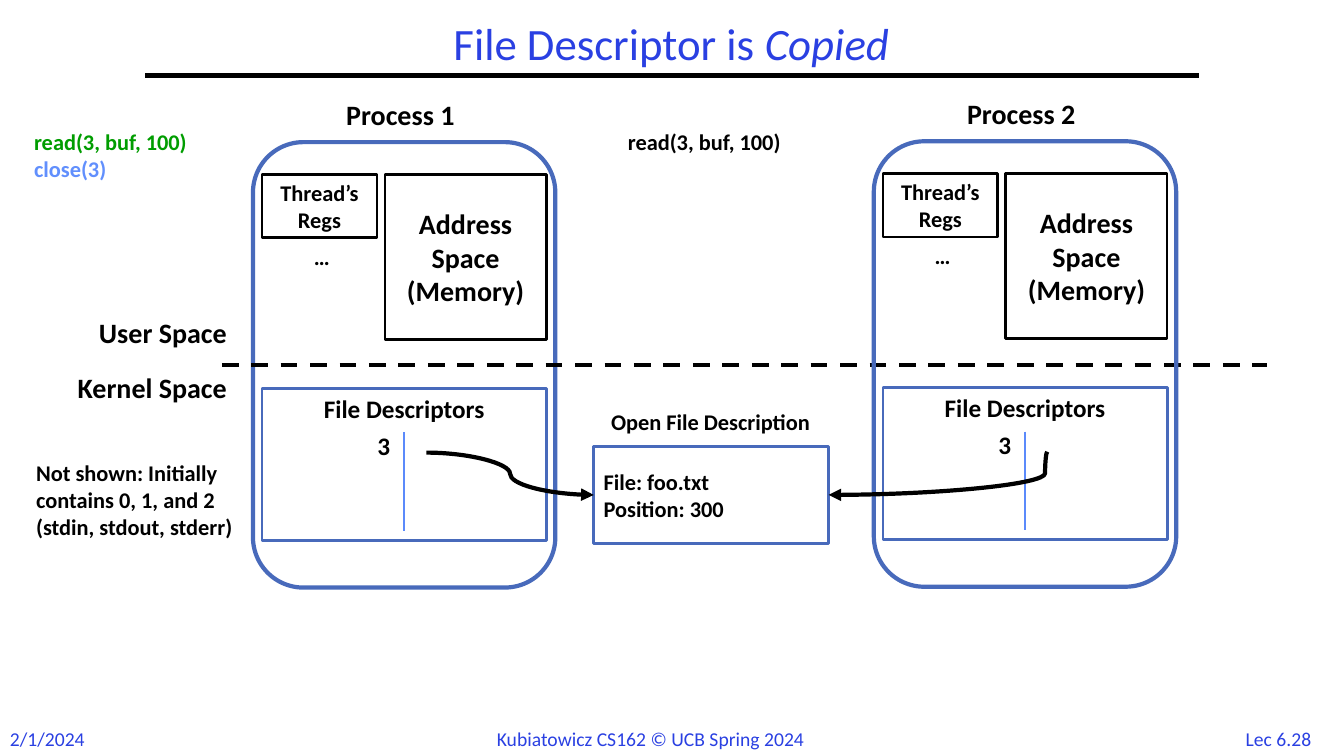
"""Builds the slide showing how a copied file descriptor shares one open file description."""
from lxml import etree
from pptx import Presentation
from pptx import util as u
from pptx.dml import color as c
from pptx.enum import dml, shapes, text
from pptx.oxml import ns

THEME = {
    "font": "Calibri",
    "title": "2A40E2", "ink": "000000", "paper": "FFFFFF", "frame": "486ABB",
    "divider": "5B8AFB", "read": "009D00", "close": "618FFD",
    "title_size": 32, "label_size": 20, "table_size": 18, "code_size": 16, "footer_size": 14,
    "thick": 3, "medium": 2, "thin": 1.5,
}
SLIDE = (960, 540)
TITLE = [("File Descriptor is ", False), ("Copied", True)]
FOOTERS = [
    ("2/1/2024", (0, 515.5, 69, 24.5), "left"),
    ("Kubiatowicz CS162 © UCB Spring 2024", (347.8, 515.5, 265, 24.5), "left"),
    ("Lec 6.28", (878.4, 515.5, 69.8, 24), "center"),
]
SPACES = [("User Space", (44.6, 221.8, 124.6, 31.7)), ("Kernel Space", (26.6, 261.4, 142.6, 31.7))]
CODE = [
    ([("read(3, buf, 100)", "read"), ("close(3)", "close")], (17.3, 87.8, 139, 46)),
    ([("read(3, buf, 100)", "ink")], (441.4, 87.8, 139, 26.6)),
]
NOTE = "Not shown: Initially contains 0, 1, and 2 (stdin, stdout, stderr)"
FILE_TITLE = "Open File Description"
FILE_STATE = ["File: foo.txt", "Position: 300"]
FILE_BOX = (424.1, 319, 167.8, 69.1)
PROCESSES = [("Process 1", 180.7, 101.5), ("Process 2", 624.2, 100.9)]
PROCESS_SIZE = (216, 318.2)
PROCESS_BOXES = [
    ("Address Space (Memory)", (94.3, 23, 115.2, 118.1), "ink", "label_size", "middle"),
    ("Thread’s Regs", (6.5, 23, 82.1, 45.4), "ink", "code_size", "middle"),
    ("File Descriptors", (6.5, 175.9, 203, 108.7), "frame", "table_size", "top"),
]
PROCESS_LABELS = [("3", (80.6, 202.3, 24.5, 28.8), "table_size", "right"),
                  ("…", (36.4, 68.6, 31, 26.6), "code_size", "left")]
PROCESS_TITLE = (50.2, -35.3, 110.2, 31.7)
DIVIDER = (108, 207.4, 108, 278)
DESCRIPTOR_Y = 221.8
ARROW_STARTS = [304.6, 748.1]

ALIGN = {"left": text.PP_ALIGN.LEFT, "center": text.PP_ALIGN.CENTER, "right": text.PP_ALIGN.RIGHT}
ANCHOR = {"top": text.MSO_ANCHOR.TOP, "middle": text.MSO_ANCHOR.MIDDLE}

prs = Presentation()
prs.slide_width, prs.slide_height = map(u.Pt, SLIDE)
s = prs.slides.add_slide(prs.slide_layouts[6])


def rgb(name):
    return c.RGBColor.from_string(THEME[name])


def write(sp, lines, size, align="left", anchor="top", wrap=True, bold=True):
    """Fills a shape with paragraphs, each a list of (words, colour, italic) runs."""
    tf = sp.text_frame
    tf.word_wrap = wrap
    tf.vertical_anchor = ANCHOR[anchor]
    for i, runs in enumerate(lines):
        p = tf.add_paragraph() if i else tf.paragraphs[0]
        p.alignment = ALIGN[align]
        for words, colour, italic in runs:
            r = p.add_run()
            r.text = words
            r.font.name, r.font.size = THEME["font"], u.Pt(THEME[size])
            r.font.bold, r.font.italic = bold, italic
            r.font.color.rgb = rgb(colour)
    return tf


def plain(*lines, colour="ink"):
    return [[(line, colour, False)] for line in lines]


def label(box, lines, size, **style):
    sp = s.shapes.add_textbox(*map(u.Pt, box))
    return write(sp, lines, size, **style)


def frame(box, colour, width, kind=shapes.MSO_SHAPE.RECTANGLE, filled=True):
    sp = s.shapes.add_shape(kind, *map(u.Pt, box))
    sp.shadow.inherit = False
    if filled:
        sp.fill.solid()
        sp.fill.fore_color.rgb = rgb("paper")
    else:
        sp.fill.background()
    sp.line.color.rgb = rgb(colour)
    sp.line.width = u.Pt(THEME[width])
    return sp


def line(ends, colour, width, kind=shapes.MSO_CONNECTOR.STRAIGHT):
    cx = s.shapes.add_connector(kind, *map(u.Pt, ends))
    cx.line.color.rgb = rgb(colour)
    cx.line.width = u.Pt(THEME[width])
    etree.SubElement(cx._element.spPr, ns.qn("a:effectLst"))
    return cx


def arrow(ends, bend):
    cx = line(ends, "ink", "thick", shapes.MSO_CONNECTOR.CURVE)
    etree.SubElement(cx.line._get_or_add_ln(), ns.qn("a:tailEnd"), type="triangle")
    guides = cx._element.spPr.find(ns.qn("a:prstGeom")).get_or_add_avLst()
    etree.SubElement(guides, ns.qn("a:gd"), name="adj1", fmla=f"val {bend}")


def process(name, x, y):
    def place(box):
        return (x + box[0], y + box[1], *box[2:])

    frame((x, y, *PROCESS_SIZE), "frame", "thick", shapes.MSO_SHAPE.ROUNDED_RECTANGLE, False)
    for words, box, colour, size, anchor in PROCESS_BOXES:
        sp = frame(place(box), colour, "medium")
        write(sp, plain(words), size, align="center", anchor=anchor)
    x1, y1, x2, y2 = DIVIDER
    line((x + x1, y + y1, x + x2, y + y2), "divider", "thin")
    for words, box, size, align in PROCESS_LABELS:
        label(place(box), plain(words), size, align=align, wrap=False)
    label(place(PROCESS_TITLE), plain(name), "label_size", align="center", wrap=False)


for words, box, align in FOOTERS:
    label(box, plain(words, colour="title"), "footer_size", align=align, wrap=False, bold=False)
line((103.7, 54, 856.1, 54), "ink", "thick")
tf = label((103.7, 12.2, 751.7, 41.8), [[(words, "title", italic) for words, italic in TITLE]],
           "title_size", align="center", anchor="middle", bold=False)
tf.paragraphs[0].line_spacing = 0.9

process(*PROCESSES[0])
line((158.4, 260.6, 905, 260.6), "ink", "thick").line.dash_style = dml.MSO_LINE.DASH
process(*PROCESSES[1])

for words, box in SPACES:
    label(box, plain(words), "label_size", align="right", wrap=False)
for lines, box in CODE:
    label(box, [[(words, colour, False)] for words, colour in lines], "code_size", wrap=False)
label((18.7, 324.7, 159.1, 85), plain(NOTE), "code_size")
label((416.9, 288, 181.4, 26.6), plain(FILE_TITLE), "code_size", align="center", wrap=False)
write(frame(FILE_BOX, "frame", "medium"), plain(*FILE_STATE), "code_size", anchor="middle")

left, top, width, height = FILE_BOX
file_y = top + height / 2
for (_, _, y), start, end, bend in zip(PROCESSES, ARROW_STARTS, (left, left + width), (50000, 1000)):
    arrow((start, y + DESCRIPTOR_Y, end, file_y), bend)

prs.save("out.pptx")
